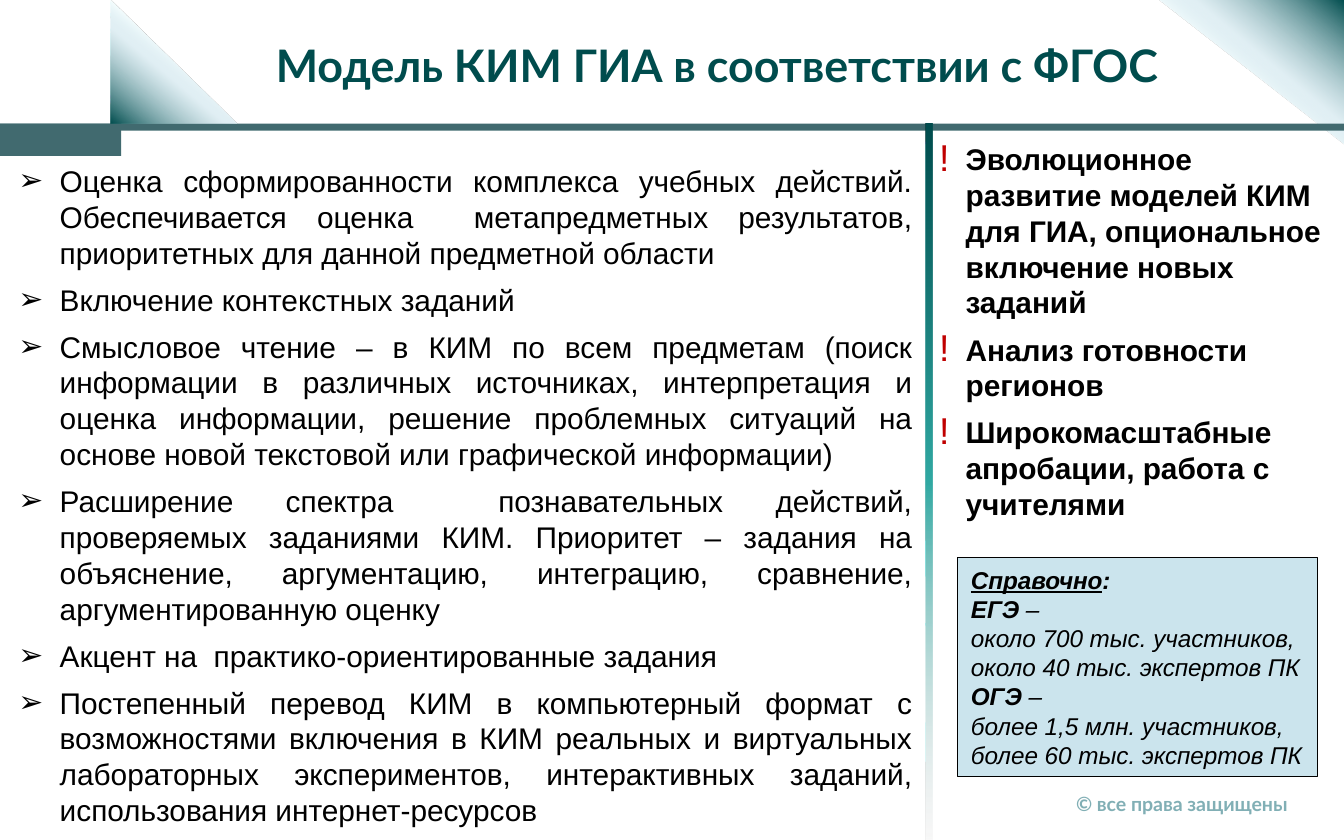
import pptx
import pptx.util
import pptx.dml.color
import pptx.enum.shapes
import pptx.enum.text
import pptx.oxml
import pptx.oxml.ns

Cm = pptx.util.Cm
Pt = pptx.util.Pt
qn = pptx.oxml.ns.qn
Kind = pptx.enum.shapes.MSO_SHAPE
Align = pptx.enum.text.PP_ALIGN
Mid = pptx.enum.text.MSO_ANCHOR.MIDDLE

HUE = {
    "deep": "004C4D", "band": "416A6F", "soft": "81AFB5", "pale": "CBE4ED",
    "text": "000000", "alert": "C00000", "night": "003333",
    "ice": "F7FFFF", "mist": "C4E0EA", "teal": "31A9A3", "grey": "D9D9D9",
}
WEDGE = [(46, "ice", 100), (58, "mist", 50), (100, "deep", 100), (100, "night", 100)]
FADE = [(0, "night", 73), (0, "deep", 100), (50, "teal", 100), (100, "grey", 18)]

POINTS = [
    "Оценка сформированности комплекса учебных действий. Обеспечивается оценка  "
    "метапредметных результатов, приоритетных для данной предметной области",
    "Включение контекстных заданий",
    "Смысловое чтение – в КИМ по всем предметам (поиск информации в различных "
    "источниках, интерпретация и оценка информации, решение проблемных ситуаций "
    "на основе новой текстовой или графической информации)",
    "Расширение спектра  познавательных действий, проверяемых заданиями КИМ. "
    "Приоритет – задания на объяснение, аргументацию, интеграцию, сравнение, "
    "аргументированную оценку",
    "Акцент на  практико-ориентированные задания",
    "Постепенный перевод КИМ в компьютерный формат с возможностями включения "
    "в КИМ реальных и виртуальных лабораторных экспериментов, интерактивных "
    "заданий, использования интернет-ресурсов",
]
ALERTS = [
    "Эволюционное развитие моделей КИМ для ГИА, опциональное включение новых заданий",
    "Анализ готовности регионов",
    "Широкомасштабные апробации, работа с учителями",
]
EXAMS = [
    ("ЕГЭ", ["около 700 тыс. участников,", "около 40 тыс. экспертов ПК"]),
    ("ОГЭ", ["более 1,5 млн. участников,", "более 60 тыс. экспертов ПК"]),
]


def color(name):
    return pptx.dml.color.RGBColor.from_string(HUE[name])


def shape(slide, box, fill, kind=Kind.RECTANGLE):
    item = slide.shapes.add_shape(kind, *map(Cm, box))
    item.shadow.inherit = False
    item.line.fill.background()
    item.fill.solid()
    item.fill.fore_color.rgb = color(fill)
    return item


def blend(item, stops, angle):
    marks = "".join(
        f'<a:gs pos="{pos * 1000}"><a:srgbClr val="{HUE[name]}">'
        f'<a:alpha val="{alpha * 1000}"/></a:srgbClr></a:gs>'
        for pos, name, alpha in stops)
    grad = pptx.oxml.parse_xml(
        f'<a:gradFill {pptx.oxml.ns.nsdecls("a")} rotWithShape="1">'
        f'<a:gsLst>{marks}</a:gsLst>'
        f'<a:lin ang="{angle * 60000}" scaled="0"/></a:gradFill>')
    props = item.element.spPr
    props.replace(props.find(qn("a:solidFill")), grad)


def turn(slide, box, kind, angle):
    x, y, w, h = box
    item = shape(slide, (x + (w - h) / 2, y + (h - w) / 2, h, w), "deep", kind)
    item.rotation = angle
    return item


def wedge(slide, box, angle):
    item = turn(slide, box, Kind.RIGHT_TRIANGLE, angle)
    item.element.spPr.xfrm.set("flipH", "1")
    blend(item, WEDGE, 140)


def write(para, text, size, face="Arial", hue="text", bold=False):
    run = para.add_run()
    run.text = text
    font = run.font
    font.size = Pt(size)
    font.name = face
    font.bold = bold
    font.color.rgb = color(hue)
    return font


def frame(slide, box):
    body = slide.shapes.add_textbox(*map(Cm, box)).text_frame
    body.word_wrap = True
    return body


def label(slide, box, text, size, hue, align=Align.LEFT):
    body = frame(slide, box)
    body.vertical_anchor = Mid
    para = body.paragraphs[0]
    para.alignment = align
    write(para, text, size, "Lato", hue, True)


def bullet(para, mark, indent, hue, scale):
    props = para._p.get_or_add_pPr()
    props.set("marL", str(Cm(indent)))
    props.set("indent", str(-Cm(indent)))
    for tag, key, value in (("buSzPct", "val", scale * 1000),
                            ("buFont", "typeface", "Arial"),
                            ("buChar", "char", mark)):
        if tag == "buSzPct":
            tint = pptx.oxml.ns.nsdecls("a")
            props.append(pptx.oxml.parse_xml(
                f'<a:buClr {tint}><a:srgbClr val="{HUE[hue]}"/></a:buClr>'))
        node = props.makeelement(qn("a:" + tag), {key: str(value)})
        props.append(node)


def points(slide, box, items, mark, indent, hue, scale=100, bold=False, align=Align.LEFT):
    body = frame(slide, box)
    for i, text in enumerate(items):
        para = body.add_paragraph() if i else body.paragraphs[0]
        bullet(para, mark, indent, hue, scale)
        para.alignment = align
        para.space_before = Pt(6 if i else 0)
        write(para, text, 16, bold=bold)


def header(slide, box):
    x, y, w, h = box
    wedge(slide, (x + w - 3.5, y, 3.5, 2.74), 270)
    shape(slide, (x, y + h, w, 0.13), "band")
    shape(slide, (x, y + h, 2.29, 0.61), "band")
    wedge(slide, (x + 2.09, y, 2.39, h), 90)
    label(slide, (x + 1.7, y + 0.53, w - 1.7, 1.4),
          "Модель КИМ ГИА в соответствии с ФГОС", 24, "deep", Align.CENTER)


def split(slide, box):
    blend(turn(slide, box, Kind.RECTANGLE, 90), FADE, 0)


def facts(slide, box):
    item = shape(slide, box, "pale")
    item.line.color.rgb = color("text")
    item.line.width = Pt(0.75)
    body = item.text_frame
    body.word_wrap = True
    body.vertical_anchor = Mid
    head = body.paragraphs[0]
    head.alignment = Align.LEFT
    write(head, "Справочно", 13, bold=True).underline = True
    write(head, ":", 13, bold=True)
    para = body.add_paragraph()
    para.alignment = Align.LEFT
    for i, (exam, lines) in enumerate(EXAMS):
        if i:
            para.add_line_break()
        write(para, exam, 13, bold=True)
        write(para, " –", 13)
        for line in lines:
            para.add_line_break()
            write(para, line, 13)
    for run in (*head.runs, *para.runs):
        run.font.italic = True


def main():
    deck = pptx.Presentation()
    deck.slide_width, deck.slide_height = Cm(25.4), Cm(15.88)
    slide = deck.slides.add_slide(deck.slide_layouts[6])
    header(slide, (0, 0, 25.4, 2.34))
    points(slide, (0.1, 2.95, 17.4, 11.81), POINTS, "➢", 0.78, "text", align=Align.JUSTIFY)
    split(slide, (17.5, 2.34, 0.13, 13.54))
    points(slide, (17.5, 2.54, 7.9, 8.2), ALERTS, "!", 0.5, "alert", 125, True)
    facts(slide, (18.1, 10.54, 6.8, 4.14))
    label(slide, (20.09, 14.83, 5.13, 0.71), "© все права защищены", 10.5, "soft")
    deck.save("out.pptx")


if __name__ == "__main__":
    main()
